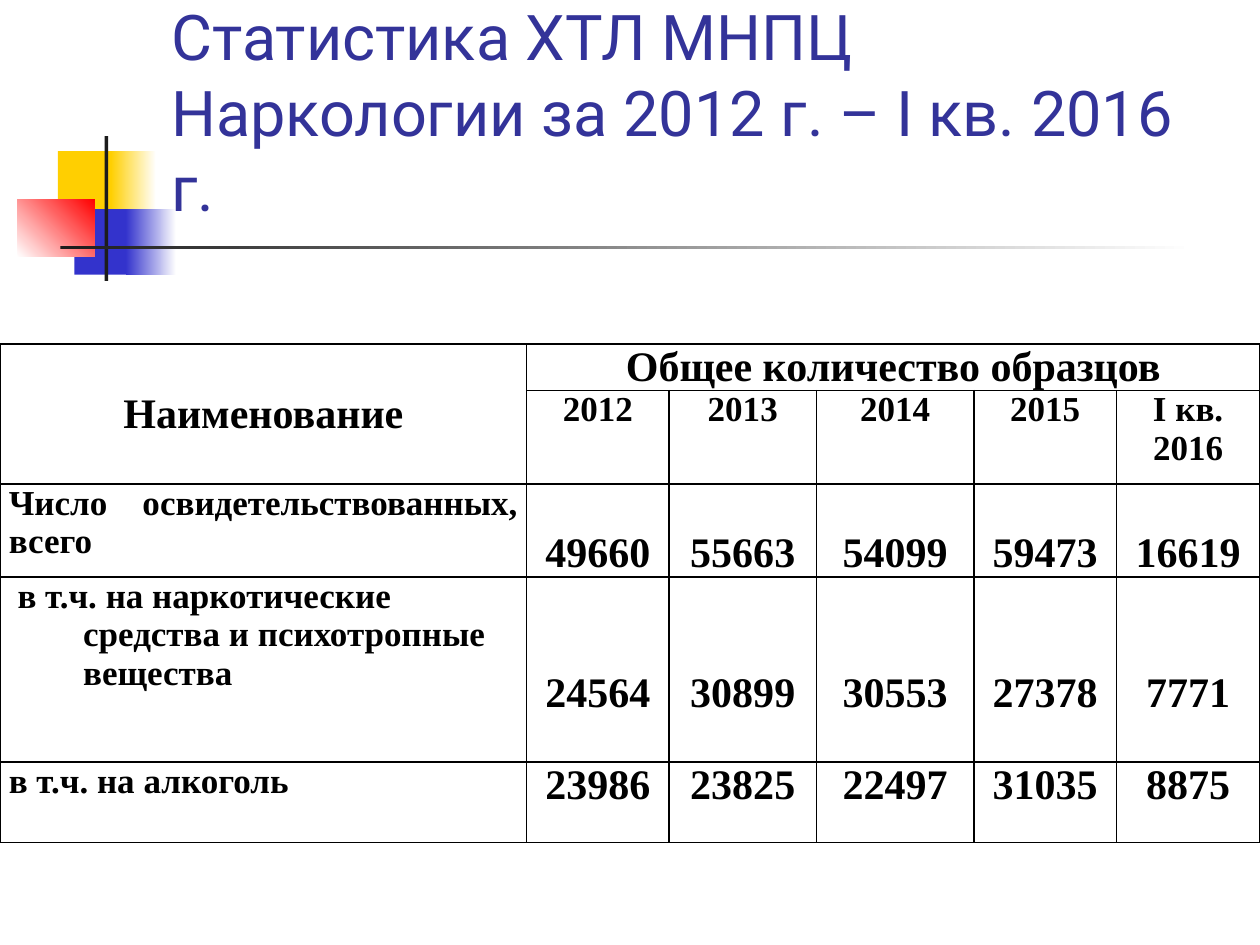
from dataclasses import dataclass

from lxml.etree import SubElement
from pptx import Presentation
from pptx.dml.color import RGBColor
from pptx.enum.shapes import MSO_SHAPE
from pptx.enum.text import MSO_ANCHOR, MSO_AUTO_SIZE, PP_ALIGN
from pptx.oxml.ns import qn
from pptx.util import Inches, Pt


@dataclass(frozen=True)
class Theme:
    yellow: str = "FFCF01"
    blue: str = "3333CC"
    red: str = "FF0000"
    dark: str = "1C1C1C"
    white: str = "FFFFFF"
    black: str = "000000"
    title: str = "333399"
    head: str = "Roboto"
    body: str = "Times New Roman"
    large: int = 36
    mid: int = 24
    small: int = 20
    rule: int = 1


THEME = Theme()

YEARS = ["2012", "2013", "2014", "2015", "I кв. 2016"]
COLS = [4.18, 1.13, 1.17, 1.25, 1.13, 1.14]
ROWS = [0.37, 0.74, 0.73, 1.47, 0.64]
# Label, its alignment, hanging indent, drop of the figures, figures
DATA = [
    ("Число освидетельствованных, всего", PP_ALIGN.JUSTIFY, 0, 0.37,
     [49660, 55663, 54099, 59473, 16619]),
    (" в т.ч. на наркотические средства и психотропные вещества",
     PP_ALIGN.LEFT, 0.59, 0.74, [24564, 30899, 30553, 27378, 7771]),
    ("в т.ч. на алкоголь", PP_ALIGN.JUSTIFY, 0.59, 0,
     [23986, 23825, 22497, 31035, 8875]),
]


def write(frame, text, size=THEME.mid, font=THEME.body, color=THEME.black,
          bold=True, align=PP_ALIGN.CENTER, hang=0):
    """Put formatted text in a frame, with an optional hanging indent."""
    para = frame.paragraphs[0]
    para.alignment = align
    if hang:
        props = para._p.get_or_add_pPr()
        props.set("marL", str(Inches(hang)))
        props.set("indent", str(-Inches(hang)))
    run = para.add_run()
    run.text = text
    run.font.size = Pt(size)
    run.font.name = font
    run.font.bold = bold
    run.font.color.rgb = RGBColor.from_string(color)


def block(slide, left, top, width, height, color, end=None, angle=0):
    """Draw a plain rectangle, or one that fades from color to end."""
    shape = slide.shapes.add_shape(
        MSO_SHAPE.RECTANGLE, Inches(left), Inches(top),
        Inches(width), Inches(height))
    shape.shadow.inherit = False
    shape.line.fill.background()
    fill = shape.fill
    if end:
        fill.gradient()
        fill.gradient_angle = angle
        for stop, tone, place in zip(fill.gradient_stops, (color, end), (0, 1)):
            stop.color.rgb = RGBColor.from_string(tone)
            stop.position = place
    else:
        fill.solid()
        fill.fore_color.rgb = RGBColor.from_string(color)


def motif(slide, left, top):
    """Coloured squares crossed by two dark rules."""
    t = THEME
    for x, y, width, height, *paint in [
        (0.32, 0.12, 0.48, 0.52, t.yellow),
        (0.74, 0.12, 0.36, 0.52, t.yellow, t.white),
        (0.45, 0.58, 0.46, 0.52, t.blue),
        (0.86, 0.58, 0.4, 0.52, t.blue, t.white),
        (0, 0.5, 0.61, 0.46, t.white, t.red, 45),
        (0.69, 0, 0.03, 1.15, t.dark),
        (0.34, 0.87, 9, 0.03, t.dark, t.white),
    ]:
        block(slide, left + x, top + y, width, height, *paint)


def heading(slide, left, top, width, height):
    """Title, resting on the bottom of its box."""
    title = slide.shapes.title
    title.left, title.top = Inches(left), Inches(top)
    title.width, title.height = Inches(width), Inches(height)
    frame = title.text_frame
    frame.word_wrap = True
    frame.auto_size = MSO_AUTO_SIZE.NONE
    frame.vertical_anchor = MSO_ANCHOR.BOTTOM
    write(frame, "Статистика ХТЛ МНПЦ Наркологии за 2012 г. – I кв. 2016 г.",
          size=THEME.large, font=THEME.head, color=THEME.title,
          bold=False, align=PP_ALIGN.LEFT)
    # Bring the title in front of the motif
    slide.shapes._spTree.append(title._element)


def border(cell):
    """Rule all four sides of a cell."""
    props = cell._tc.get_or_add_tcPr()
    for i, side in enumerate(("a:lnL", "a:lnR", "a:lnT", "a:lnB")):
        line = SubElement(props, qn(side), w=str(Pt(THEME.rule)))
        fill = SubElement(line, qn("a:solidFill"))
        SubElement(fill, qn("a:srgbClr"), val=THEME.black)
        props.insert(i, line)


def samples(slide, left, top, width):
    """Table of sample counts by year."""
    table = slide.shapes.add_table(
        len(ROWS), len(COLS), Inches(left), Inches(top),
        Inches(width), Inches(sum(ROWS))).table
    table.first_row = table.horz_banding = False
    for col, share in zip(table.columns, COLS):
        col.width = Inches(width * share / sum(COLS))
    for row, height in zip(table.rows, ROWS):
        row.height = Inches(height)
    for cell in table.iter_cells():
        cell.margin_left = cell.margin_right = Inches(0.07)
        cell.margin_top = cell.margin_bottom = 0
        cell.fill.background()
        border(cell)

    # Header
    name, total = table.cell(0, 0), table.cell(0, 1)
    name.merge(table.cell(1, 0))
    total.merge(table.cell(0, len(YEARS)))
    name.vertical_anchor = MSO_ANCHOR.MIDDLE
    write(name.text_frame, "Наименование")
    write(total.text_frame, "Общее количество образцов")
    for c, year in enumerate(YEARS, 1):
        write(table.cell(1, c).text_frame, year, size=THEME.small)

    # Figures
    for r, (label, align, hang, drop, counts) in enumerate(DATA, 2):
        write(table.cell(r, 0).text_frame, label, size=THEME.small,
              align=align, hang=hang)
        for c, count in enumerate(counts, 1):
            cell = table.cell(r, c)
            cell.margin_top = Inches(drop)
            write(cell.text_frame, str(count))


def main():
    deck = Presentation()
    deck.slide_width, deck.slide_height = Inches(10), Inches(7.5)
    slide = deck.slides.add_slide(deck.slide_layouts[5])
    motif(slide, 0.14, 1.08)
    heading(slide, 1.26, 0.23, 8.52, 1.6)
    samples(slide, 0, 2.73, 10)
    deck.save("out.pptx")


if __name__ == "__main__":
    main()
